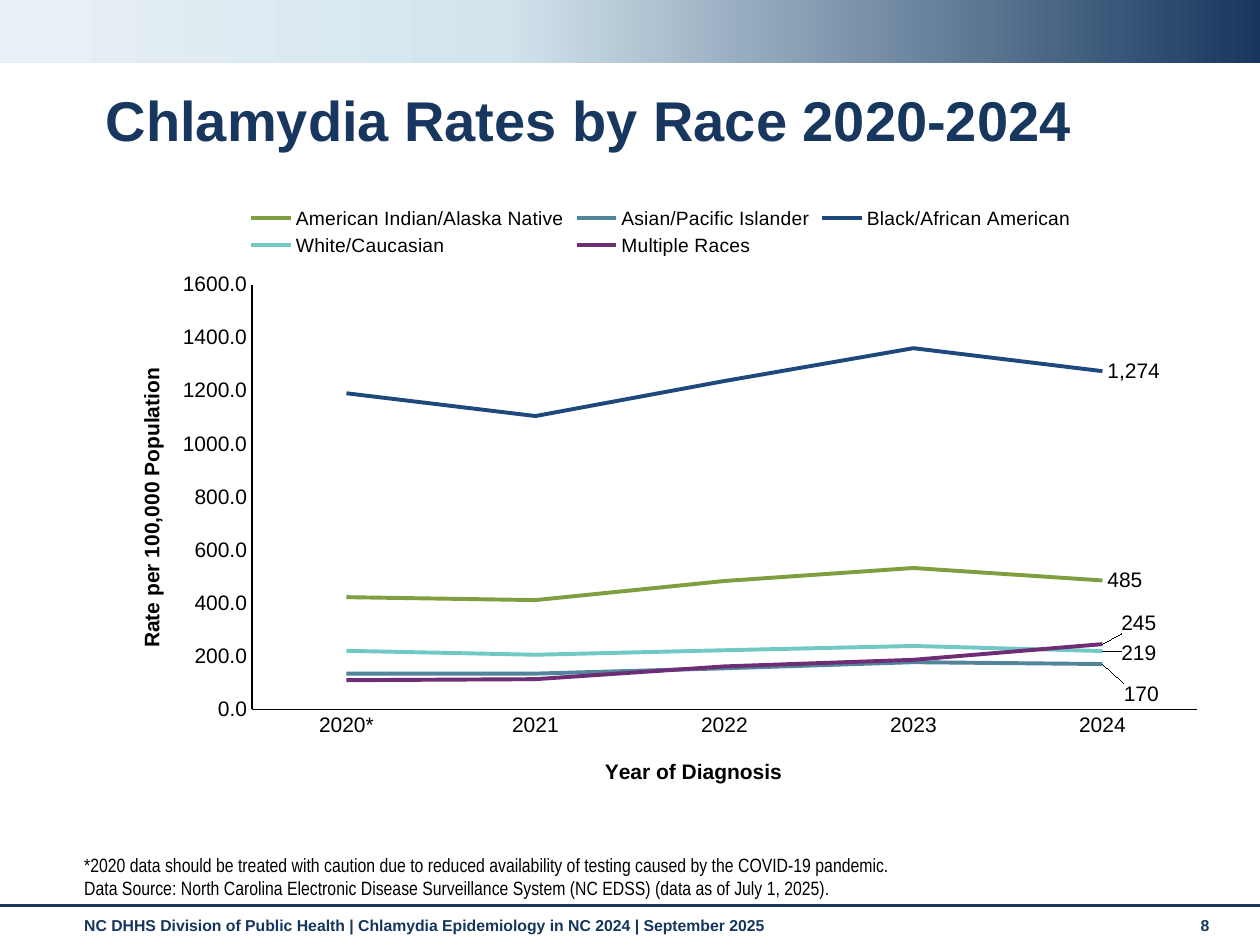
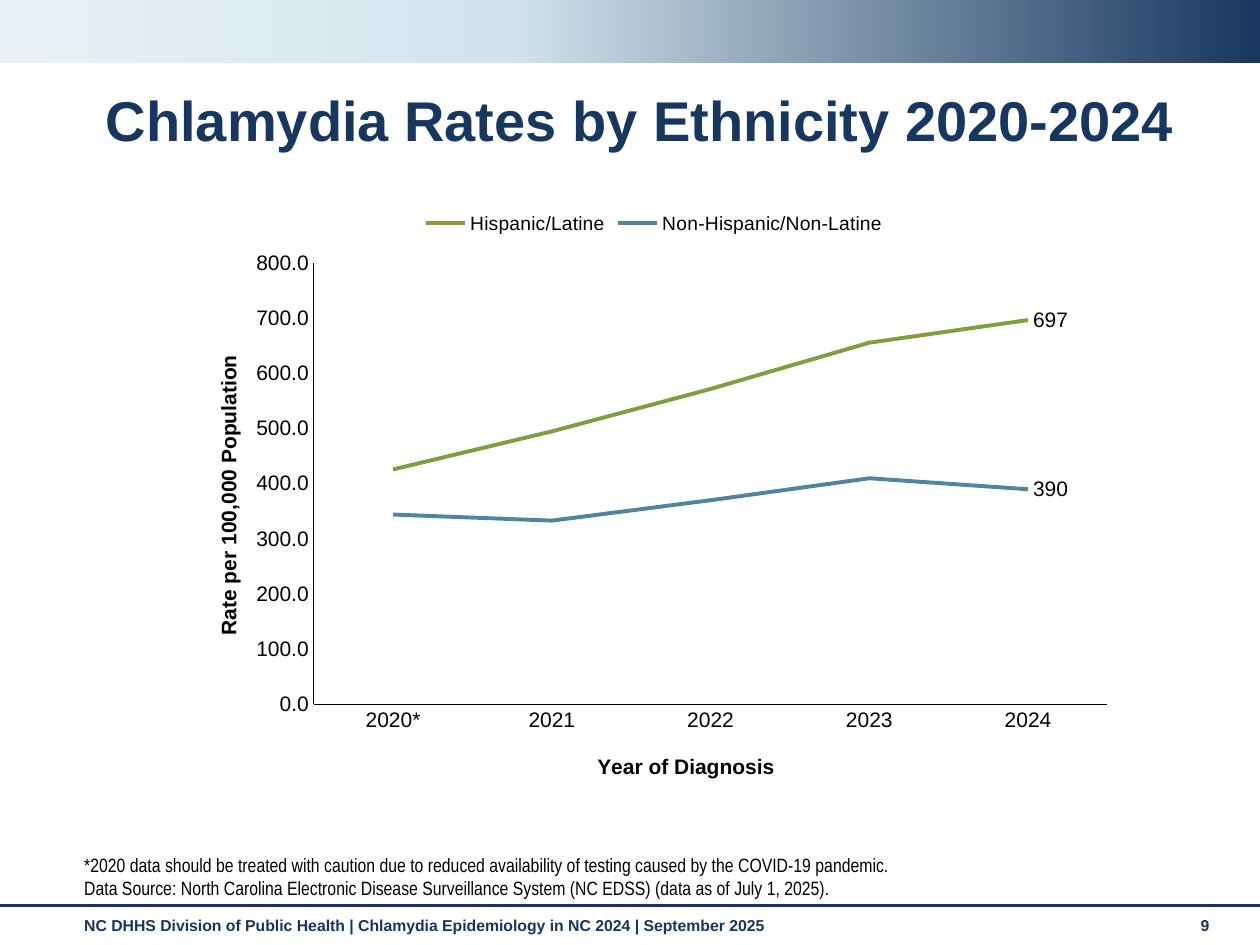
from copy import deepcopy
from dataclasses import dataclass

from lxml import etree
from pptx import Presentation
from pptx.chart.data import CategoryChartData
from pptx.dml.color import RGBColor
from pptx.enum.chart import XL_CHART_TYPE as ChartType
from pptx.enum.chart import XL_LABEL_POSITION as LabelPosition
from pptx.enum.chart import XL_LEGEND_POSITION as LegendPosition
from pptx.enum.chart import XL_TICK_MARK as TickMark
from pptx.enum.shapes import MSO_CONNECTOR as Connector
from pptx.enum.shapes import MSO_SHAPE as ShapeType
from pptx.enum.text import MSO_ANCHOR as Anchor
from pptx.enum.text import MSO_AUTO_SIZE as AutoSize
from pptx.enum.text import PP_ALIGN as Align
from pptx.oxml.ns import qn
from pptx.util import Inches, Pt


@dataclass(frozen=True)
class Theme:
    font: str = "Arial"
    note_font: str = "Arial Narrow"
    navy: str = "17375E"
    footer: str = "15365E"
    black: str = "000000"
    band: tuple = ((0, "17375E"), (0.6, "D3E4ED"), (1, "E9F1F6"))
    series: tuple = ("7F9E3F", "52849C", "1F497D", "71C9C5", "6D2E75")
    title_size: float = 32
    axis_size: float = 12
    legend_size: float = 11
    note_size: float = 11
    footer_size: float = 9
    chart_size: float = 10


THEME = Theme()

# Content
FOOTER = "NC DHHS Division of Public Health | Chlamydia Epidemiology in NC 2024 | September 2025"
NOTES = [
    "*2020 data should be treated with caution due to reduced availability of testing caused by the COVID-19 pandemic.",
    "Data Source: North Carolina Electronic Disease Surveillance System (NC EDSS) (data as of July 1, 2025).",
]
YEARS = ["2020*", "2021", "2022", "2023", "2024"]
YEAR_TITLE = "Year of Diagnosis"
RATE_TITLE = "Rate per 100,000 Population"

# Boxes are left, top, width, height in inches; label shifts are inches from the default place
SLIDES = [
    {
        "number": 8,
        "title": "Chlamydia Rates by Race 2020-2024",
        "title_width": 8.58,
        "chart_box": (0.82, 1.53, 8.85, 4.86),
        "plot_box": (2, 2.26, 7.5, 3.37),
        "year_title_at": (4.77, 5.99),
        "rate_title_at": (1.07, 2.89),
        "rate_step": 200,
        "rates": {
            "American Indian/Alaska Native": (422, 411, 483, 532, 485),
            "Asian/Pacific Islander": (134, 134, 154, 177, 170),
            "Black/African American": (1190.5, 1104.7, 1236.6, 1360.5, 1273.8),
            "White/Caucasian": (220, 205, 222, 238, 219),
            "Multiple Races": (109, 113, 161, 186, 245),
        },
        "label_shifts": {
            "Asian/Pacific Islander": (0.13, 0.24),
            "White/Caucasian": (0.11, 0.02),
            "Multiple Races": (0.11, -0.17),
        },
    },
    {
        "number": 9,
        "title": "Chlamydia Rates by Ethnicity 2020-2024",
        "title_width": 8.8,
        "chart_box": (1.44, 1.57, 7.5, 4.77),
        "plot_box": (2.49, 2.09, 6.3, 3.5),
        "year_title_at": (4.71, 5.95),
        "rate_title_at": (1.68, 2.79),
        "rate_step": 100,
        "rates": {
            "Hispanic/Latine": (426, 495, 572, 656, 697),
            "Non-Hispanic/Non-Latine": (344, 333, 370, 410, 390),
        },
        "label_shifts": {},
    },
]


# Text
def format_font(font, size, color=THEME.black, bold=False, name=THEME.font):
    font.name, font.size, font.bold = name, Pt(size), bold
    font.color.rgb = RGBColor.from_string(color)


def write_text(frame, lines, anchor=Anchor.TOP, spacing=None, **font_format):
    frame.word_wrap = True
    frame.auto_size = AutoSize.NONE
    frame.vertical_anchor = anchor
    for index, line in enumerate(lines):
        paragraph = frame.add_paragraph() if index else frame.paragraphs[0]
        paragraph.alignment = Align.LEFT
        paragraph.line_spacing = spacing
        run = paragraph.add_run()
        run.text = line
        format_font(run.font, **font_format)


def add_text(slide, box, lines, **text_format):
    textbox = slide.shapes.add_textbox(*map(Inches, box))
    write_text(textbox.text_frame, lines, **text_format)


# Shared slide parts
def add_band(slide):
    band = slide.shapes.add_shape(ShapeType.RECTANGLE, 0, 0, Inches(10), Inches(0.5))
    band.shadow.inherit = False
    band.line.fill.background()
    band.fill.gradient()
    band.fill.gradient_angle = 180
    stop_list = band._element.spPr.find(".//" + qn("a:gsLst"))
    stop_list.append(deepcopy(stop_list[-1]))
    for stop, (position, color) in zip(band.fill.gradient_stops, THEME.band):
        stop.position = position
        stop.color.rgb = RGBColor.from_string(color)


def add_footer(slide, number):
    rule = slide.shapes.add_connector(
        Connector.STRAIGHT, 0, Inches(7.19), Inches(10), Inches(7.19))
    rule.line.color.rgb = RGBColor.from_string(THEME.navy)
    rule.line.width = Pt(1.75)
    etree.SubElement(rule._element.spPr, qn("a:effectLst"))
    for box, text in (((0.57, 7.22, 8.74, 0.29), FOOTER), ((9.43, 7.22, 0.44, 0.3), str(number))):
        add_text(slide, box, [text], size=THEME.footer_size, color=THEME.footer, bold=True)


def set_title(slide, text, width):
    title = slide.shapes.title
    title.left, title.top, title.width, title.height = map(Inches, (0.74, 0.68, width, 0.6))
    write_text(title.text_frame, [text], anchor=Anchor.MIDDLE, spacing=0.9,
               size=THEME.title_size, color=THEME.navy, bold=True)


# Chart
def set_layout(element, index, **settings):
    """Place a chart part by hand; settings follow the schema order."""
    for old in element.findall(qn("c:layout")):
        element.remove(old)
    layout = etree.Element(qn("c:layout"))
    manual = etree.SubElement(layout, qn("c:manualLayout"))
    for name, value in settings.items():
        etree.SubElement(manual, qn("c:" + name)).set("val", str(value))
    element.insert(index, layout)


def format_axis(axis, title, title_at, chart_box):
    left, top, width, height = chart_box
    axis.has_major_gridlines = False
    axis.major_tick_mark = axis.minor_tick_mark = TickMark.NONE
    axis.format.line.color.rgb = RGBColor.from_string(THEME.black)
    axis.format.line.width = Pt(0.75)
    format_font(axis.tick_labels.font, THEME.axis_size)
    frame = axis.axis_title.text_frame
    frame.text = title
    format_font(frame.paragraphs[0].runs[0].font, THEME.axis_size, bold=True)
    set_layout(axis.axis_title._element, 1, xMode="edge", yMode="edge",
               x=(title_at[0] - left) / width, y=(title_at[1] - top) / height)


def label_last_point(series, shift, chart_box):
    series.data_labels.show_value = False
    label = series.points[len(YEARS) - 1].data_label
    format_font(label.font, THEME.axis_size)
    label.position = LabelPosition.RIGHT
    element = series._element.find(".//" + qn("c:dLbl"))
    number_format = etree.Element(qn("c:numFmt"), formatCode="#,##0", sourceLinked="0")
    element.insert(1, number_format)
    if shift:
        set_layout(element, 1, x=shift[0] / chart_box[2], y=shift[1] / chart_box[3])


def add_rate_chart(slide, content):
    box = content["chart_box"]
    data = CategoryChartData(number_format="####0.0")
    data.categories = YEARS
    for name, rates in content["rates"].items():
        data.add_series(name, rates)
    chart = slide.shapes.add_chart(ChartType.LINE, *map(Inches, box), data).chart
    chart.has_title = False
    format_font(chart.font, THEME.chart_size)
    chart.has_legend = True
    chart.legend.position = LegendPosition.TOP
    chart.legend.include_in_layout = False
    format_font(chart.legend.font, THEME.legend_size)

    format_axis(chart.category_axis, YEAR_TITLE, content["year_title_at"], box)
    rate_axis = chart.value_axis
    format_axis(rate_axis, RATE_TITLE, content["rate_title_at"], box)
    rate_axis.minimum_scale = 0
    rate_axis.maximum_scale = 8 * content["rate_step"]
    rate_axis.major_unit = content["rate_step"]
    rate_axis.tick_labels.number_format = "####0.0"
    rate_axis.tick_labels.number_format_is_linked = False

    plot = chart.plots[0]
    plot.vary_by_categories = False
    for series, color in zip(plot.series, THEME.series):
        series.smooth = False
        series.format.line.color.rgb = RGBColor.from_string(color)
        series.format.line.width = Pt(2.25)
        label_last_point(series, content["label_shifts"].get(series.name), box)

    left, top, width, height = content["plot_box"]
    set_layout(chart._chartSpace.find(".//" + qn("c:plotArea")), 0,
               layoutTarget="inner", xMode="edge", yMode="edge",
               x=(left - box[0]) / box[2], y=(top - box[1]) / box[3],
               w=width / box[2], h=height / box[3])


def main():
    presentation = Presentation()
    presentation.slide_width, presentation.slide_height = Inches(10), Inches(7.5)
    for content in SLIDES:
        slide = presentation.slides.add_slide(presentation.slide_layouts[5])
        add_band(slide)
        add_footer(slide, content["number"])
        set_title(slide, content["title"], content["title_width"])
        add_text(slide, (0.57, 6.83, 9.1, 0.36), NOTES, anchor=Anchor.BOTTOM,
                 size=THEME.note_size, name=THEME.note_font)
        add_rate_chart(slide, content)
    presentation.save("out.pptx")


if __name__ == "__main__":
    main()
